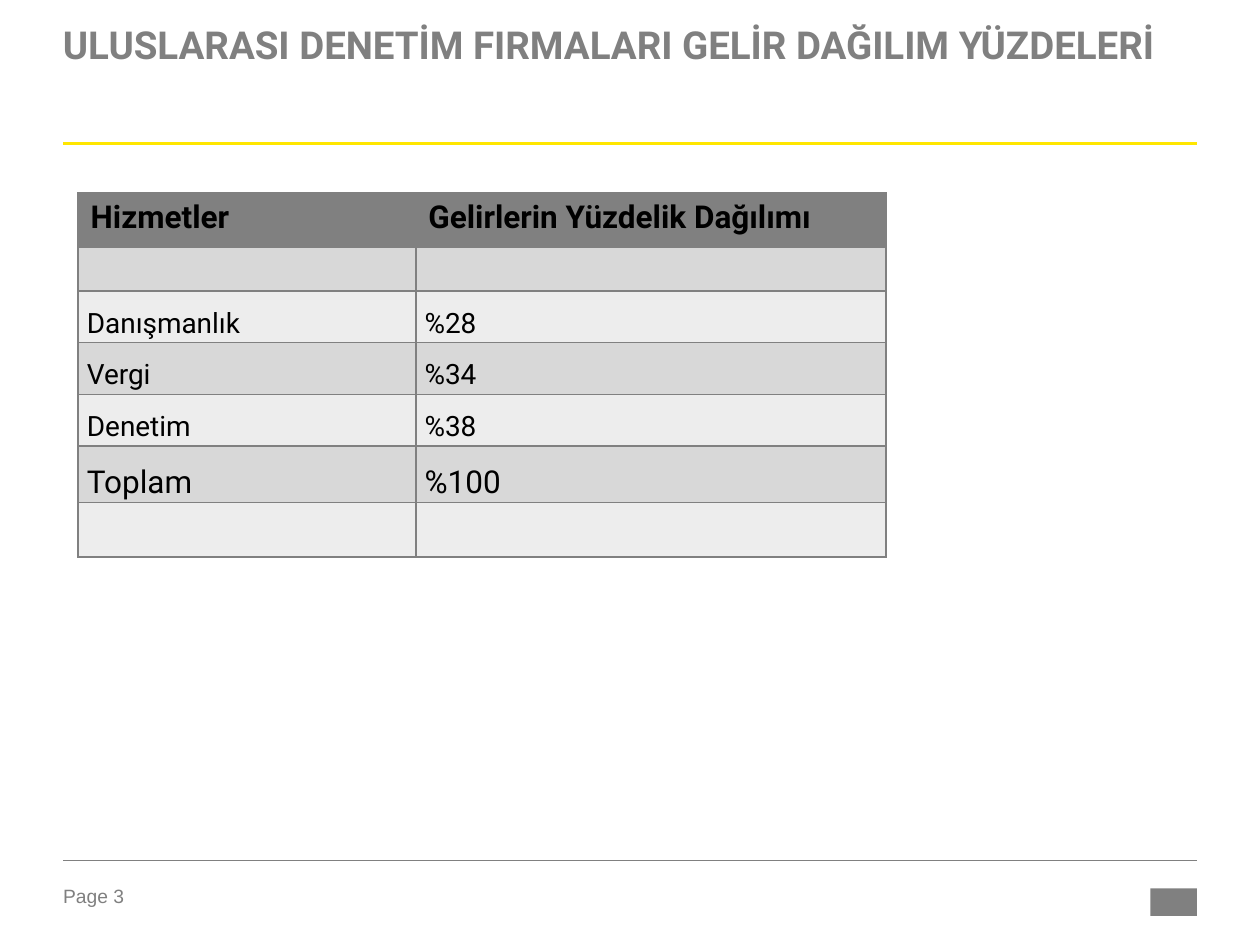
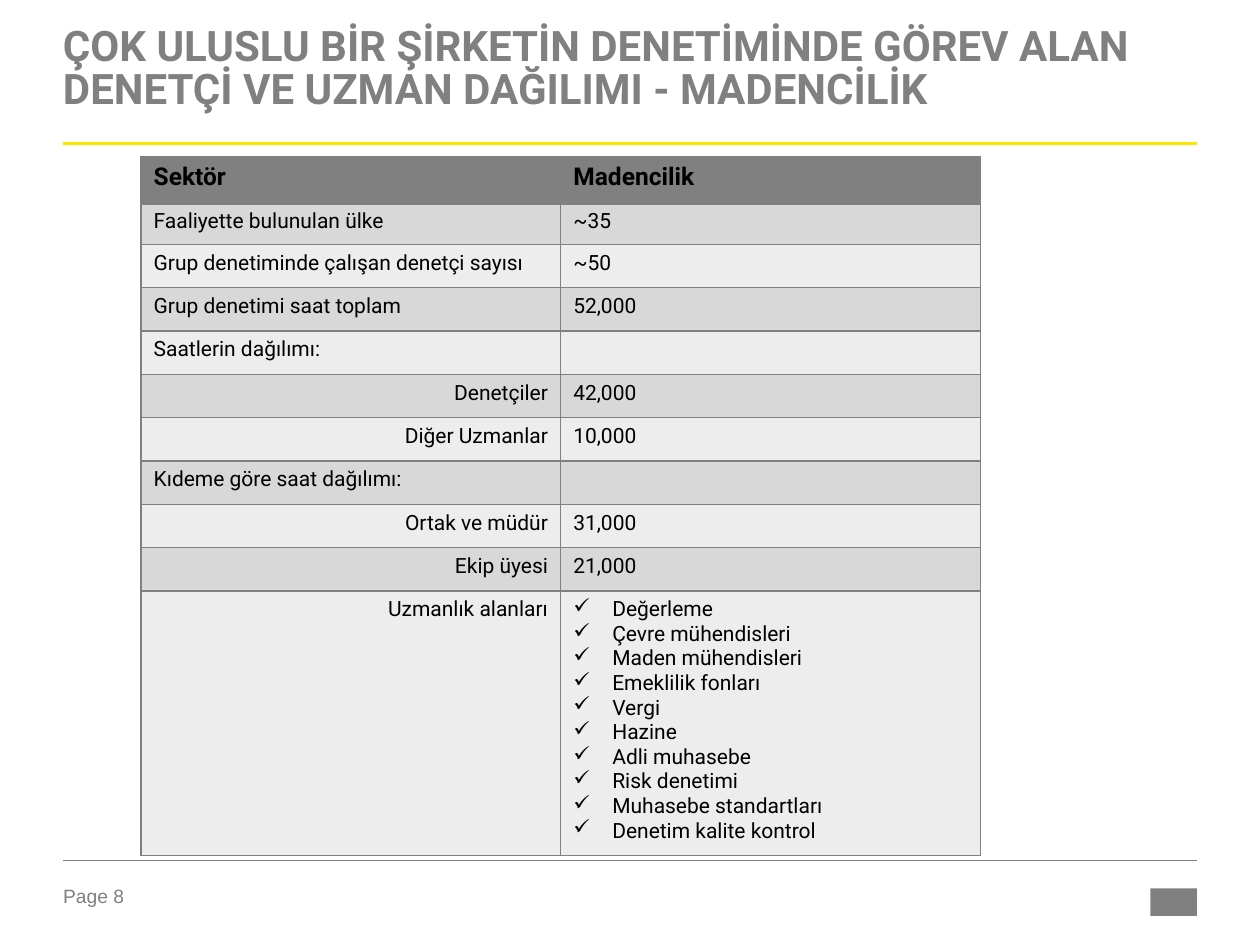
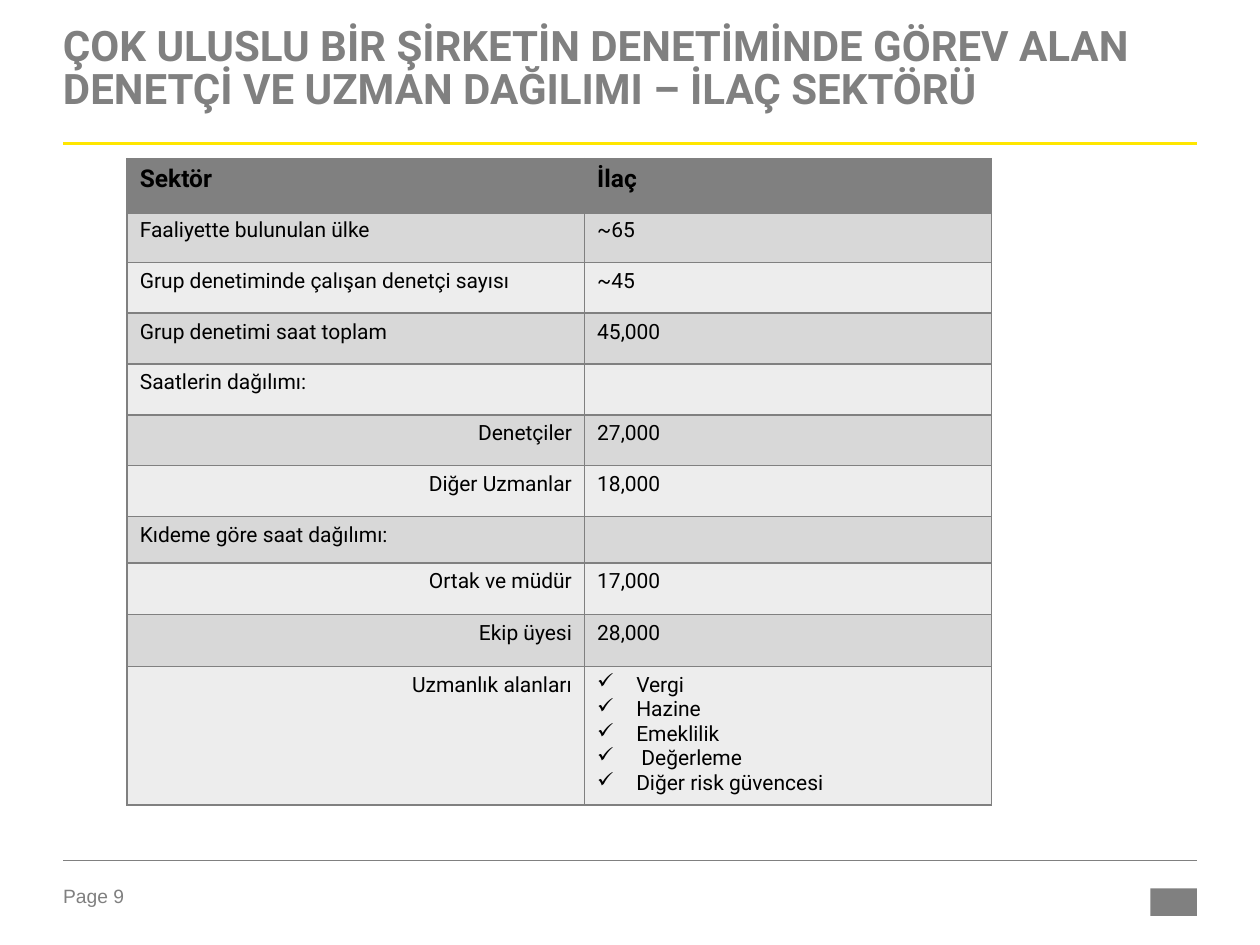
from lxml import etree
from pptx import Presentation
from pptx.dml.color import RGBColor
from pptx.enum.shapes import MSO_CONNECTOR, MSO_SHAPE
from pptx.enum.text import PP_ALIGN
from pptx.oxml.ns import qn
from pptx.util import Inches, Pt

STRAIGHT = MSO_CONNECTOR.STRAIGHT
RECTANGLE = MSO_SHAPE.RECTANGLE
LEFT, RIGHT = PP_ALIGN.LEFT, PP_ALIGN.RIGHT

GRAY = RGBColor(0x80, 0x80, 0x80)
YELLOW = RGBColor(0xFF, 0xE6, 0x00)
BLACK = RGBColor(0x00, 0x00, 0x00)
BANDS = RGBColor(0xD8, 0xD8, 0xD8), RGBColor(0xED, 0xED, 0xED)
HEADING_FONT, FOOTER_FONT = "Roboto", "Arial"

MARGIN, CONTENT_W = 0.5, 9
INDENT = Inches(0.31)

REVENUE = [
    ("Hizmetler", "Gelirlerin Yüzdelik Dağılımı"),
    ("", ""),
    ("Danışmanlık", "%28"),
    ("Vergi", "%34"),
    ("Denetim", "%38"),
    ("Toplam", "%100"),
    ("", ""),
]
SECTOR_LABELS = [
    "Sektör", "Faaliyette bulunulan ülke", "Grup denetiminde çalışan denetçi sayısı",
    "Grup denetimi saat toplam", "Saatlerin dağılımı:", "Denetçiler", "Diğer Uzmanlar",
    "Kıdeme göre saat dağılımı:", "Ortak ve müdür", "Ekip üyesi", "Uzmanlık alanları",
]
SUB_LABELS = {"Denetçiler", "Diğer Uzmanlar", "Ortak ve müdür", "Ekip üyesi",
              "Uzmanlık alanları"}
MINING = ["Madencilik", "~35", "~50", "52,000", "", "42,000", "10,000", "", "31,000", "21,000"]
MINING_EXPERTS = ["Değerleme", "Çevre mühendisleri", "Maden mühendisleri", "Emeklilik fonları",
                  "Vergi", "Hazine", "Adli muhasebe", "Risk denetimi",
                  "Muhasebe standartları", "Denetim kalite kontrol"]
PHARMA = ["İlaç", "~65", "~45", "45,000", "", "27,000", "18,000", "", "17,000", "28,000"]
PHARMA_EXPERTS = ["Vergi", "Hazine", "Emeklilik", " Değerleme", "Diğer risk güvencesi"]


def style_paragraph(p, size, font, color, bold=False):
    for r in p.runs:
        r.font.size = Pt(size)
        r.font.name = font
        r.font.bold = bold
        r.font.color.rgb = color


def add_text(s, box, text, size, font, bold=False, spacing=None):
    tf = s.shapes.add_textbox(*map(Inches, box)).text_frame
    tf.word_wrap = True
    tf.margin_left = tf.margin_right = tf.margin_top = tf.margin_bottom = 0
    p = tf.paragraphs[0]
    p.text = text
    p.line_spacing = spacing
    style_paragraph(p, size, font, GRAY, bold)


def add_rule(s, y, color, width):
    x1, x2 = Inches(MARGIN), Inches(MARGIN + CONTENT_W)
    line = s.shapes.add_connector(STRAIGHT, x1, Inches(y), x2, Inches(y))
    line.line.color.rgb = color
    line.line.width = Pt(width)
    etree.SubElement(line._element.spPr, qn("a:effectLst"))


def add_frame(prs, title, title_size, page):
    """Slide with title, rules and footer."""
    s = prs.slides.add_slide(prs.slide_layouts[6])
    add_text(s, (MARGIN, 7.02, 0.79, 0.22), f"Page {page}", 11, FOOTER_FONT)
    # Plain block in the footer's right corner
    block = s.shapes.add_shape(RECTANGLE, *map(Inches, (9.13, 7.05, 0.37, 0.22)))
    block.shadow.inherit = False
    block.fill.solid()
    block.fill.fore_color.rgb = GRAY
    block.line.fill.background()
    add_rule(s, 1.14, YELLOW, 1.5)
    add_rule(s, 6.83, GRAY, 0.25)
    add_text(s, (MARGIN, 0.22, CONTENT_W, 0.94), title, title_size, HEADING_FONT, True, 0.85)
    return s


def set_borders(cell, bottom):
    tcPr = cell._tc.get_or_add_tcPr()
    for side, width in (("L", 1), ("R", 1), ("T", 1), ("B", bottom)):
        ln = etree.SubElement(tcPr, qn(f"a:ln{side}"), w=str(Pt(width)))
        fill = etree.SubElement(ln, qn("a:solidFill"))
        etree.SubElement(fill, qn("a:srgbClr"), val=str(GRAY))


def add_check(p):
    pPr = p._p.get_or_add_pPr()
    pPr.set("marL", str(INDENT))
    pPr.set("indent", str(-INDENT))
    etree.SubElement(pPr, qn("a:buChar"), char="✓")


def add_grid(s, left, top, widths, heights, rows):
    """Table with a gray header and banded rows; returns the table."""
    box = map(Inches, (left, top, sum(widths), sum(heights)))
    table = s.shapes.add_table(len(rows), len(widths), *box).table
    table.horz_banding = False
    for col, width in zip(table.columns, widths):
        col.width = Inches(width)
    for i, (row, height, texts) in enumerate(zip(table.rows, heights, rows)):
        row.height = Inches(height)
        for cell, text in zip(row.cells, texts):
            set_borders(cell, 1 if i else 3)
            cell.fill.solid()
            cell.fill.fore_color.rgb = BANDS[(i - 1) % 2] if i else GRAY
            cell.text_frame.text = text
            if not text:
                cell.margin_top = cell.margin_bottom = 0
    return table


def revenue_slide(prs):
    s = add_frame(prs, "ULUSLARASI DENETİM FIRMALARI GELİR DAĞILIM YÜZDELERİ", 22, 3)
    heights = [0.42, 0.36, 0.41, 0.41, 0.41, 0.44, 0.43]
    table = add_grid(s, 0.62, 1.53, (2.68, 3.73), heights, REVENUE)
    for i, row in enumerate(table.rows):
        for cell in row.cells:
            p = cell.text_frame.paragraphs[0]
            if i and p.text:
                cell.margin_left = cell.margin_right = Inches(0.07)
                cell.margin_top = cell.margin_bottom = 0
                p.line_spacing = 1.5
            size = 18 if i == 0 or REVENUE[i][0] == "Toplam" else 16
            style_paragraph(p, size, HEADING_FONT, BLACK, i == 0)


def sector_slide(prs, page, sector, left, top, widths, heights, values, experts):
    title = f"ÇOK ULUSLU BİR ŞİRKETİN DENETİMİNDE GÖREV ALAN DENETÇİ VE UZMAN DAĞILIMI {sector}"
    s = add_frame(prs, title, 24, page)
    rows = list(zip(SECTOR_LABELS, values + ["\n".join(experts)]))
    table = add_grid(s, left, top, widths, heights, rows)
    for i, row in enumerate(table.rows):
        for cell in row.cells:
            for p in cell.text_frame.paragraphs:
                p.alignment = RIGHT if p.text in SUB_LABELS else LEFT
                style_paragraph(p, 12 if i else 14, HEADING_FONT, BLACK, i == 0)
    # Check marks for the fields of expertise
    for p in table.cell(len(rows) - 1, 1).text_frame.paragraphs:
        add_check(p)


def main():
    prs = Presentation()
    prs.slide_width, prs.slide_height = Inches(10), Inches(7.5)
    revenue_slide(prs)
    sector_slide(prs, 8, "- MADENCİLİK", 1.12, 1.24, (3.33, 3.33),
                 [0.37, 0.33] + [2.75 / 8] * 8 + [2.06], MINING, MINING_EXPERTS)
    sector_slide(prs, 9, "– İLAÇ SEKTÖRÜ", 1.01, 1.26, (3.63, 3.23),
                 [0.42] + [2.42 / 6] * 6 + [0.37, 0.41, 0.41, 1.07], PHARMA, PHARMA_EXPERTS)
    prs.save("out.pptx")


if __name__ == "__main__":
    main()
